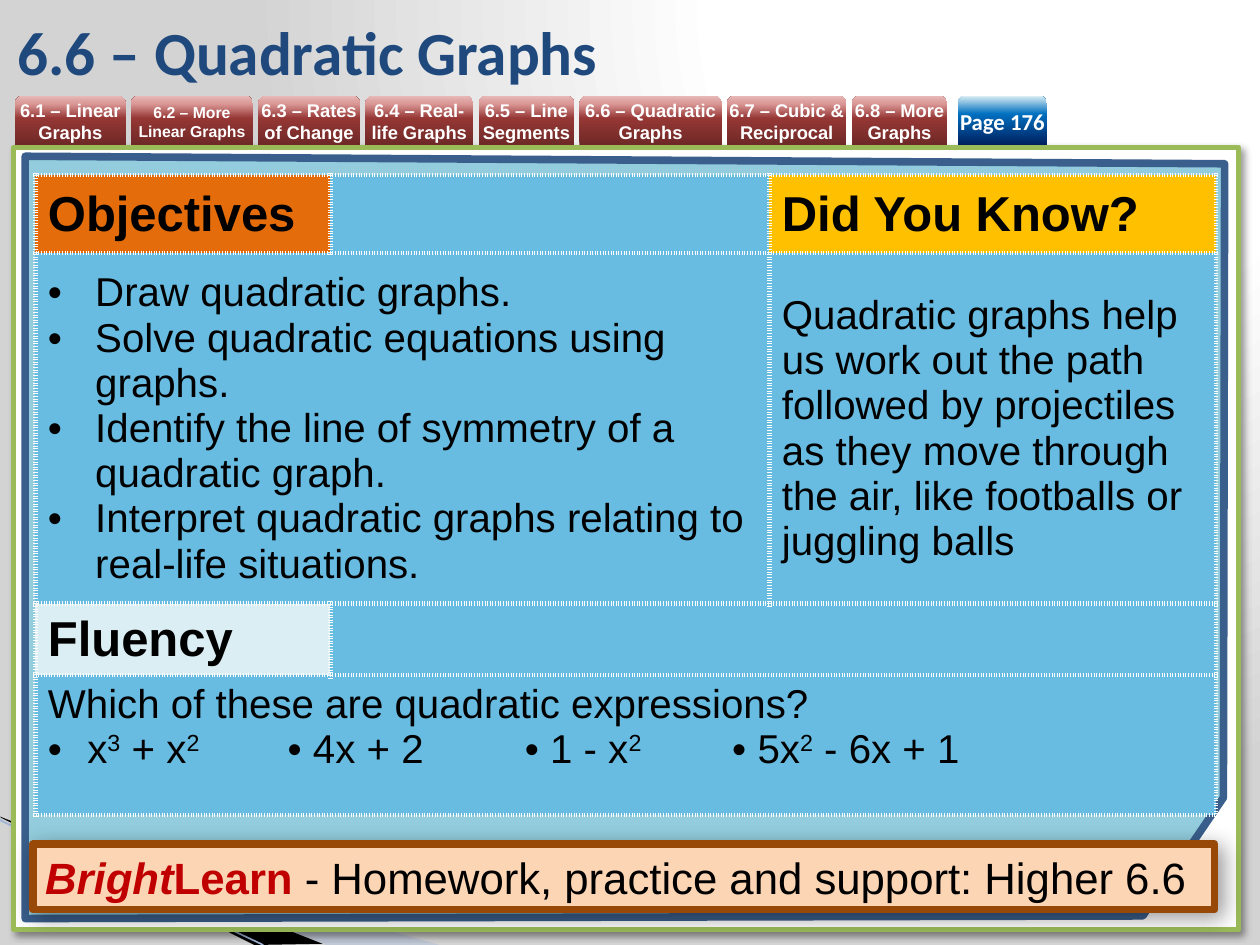
from dataclasses import dataclass
from typing import Optional

from lxml import etree
from pptx import Presentation
from pptx import util as u
from pptx.dml.color import RGBColor
from pptx.enum import shapes, text
from pptx.oxml import ns

Pt = u.Pt
SKY = "68BCE1"
TAB_TOP, TAB_HEIGHT, TAB_GAP = 54.7, 28.1, 2.9
RED_STOPS = ((0, "6F2927"), (54, "953735"), (83, "D99694"), (100, "E6B9B8"))
BLUE_STOPS = ((0, "002060"), (63, "0070C0"), (100, "DBEEF4"))
GREY_STOPS = ((0, "FFFFFF"), (40, "FFFFFF"), (100, "D3D3D3"))
UPWARD = {"lin": {"ang": "16200000", "scaled": "0"}}
HEAD = {"size": Pt(28), "bold": True}
BODY = {"size": Pt(23), "bold": False}


@dataclass
class Tab:
    label: str
    width: float
    size: float = 10.5


@dataclass
class Cell:
    row: int
    col: int
    lines: tuple
    style: dict
    fill: str = SKY
    indent: float = 0
    stops: tuple = ()
    first_bullet: int = 0
    anchor: text.MSO_ANCHOR = text.MSO_ANCHOR.MIDDLE


def colour(value: str) -> RGBColor:
    return RGBColor.from_string(value)


def add(parent, tag: str, **attrs):
    return etree.SubElement(parent, ns.qn("a:" + tag), attrs)


def add_run(p, words: str, style: dict, hex_colour: str = "000000", name: str = "Arial"):
    r = p.add_run()
    r.text = words
    for key, value in {"name": name, **style}.items():
        setattr(r.font, key, value)
    r.font.color.rgb = colour(hex_colour)
    return r


def set_gradient(holder, fill, stops: tuple, shade: dict):
    """Swap the solid fill of holder for a gradient."""
    fill.solid()
    solid = holder.find(ns.qn("a:solidFill"))
    grad = etree.Element(ns.qn("a:gradFill"), {"rotWithShape": "1"})
    stop_list = add(grad, "gsLst")
    for pos, value in stops:
        add(add(stop_list, "gs", pos=str(pos * 1000)), "srgbClr", val=value)
    for tag, attrs in shade.items():
        node = add(grad, tag, **attrs)
        if tag == "path":
            add(node, "fillToRect", l="65000", b="98000")
    holder.replace(solid, grad)


def style_shape(sp, fill: str, line: Optional[str] = None, width: float = 0):
    sp.shadow.inherit = False
    sp.fill.solid()
    sp.fill.fore_color.rgb = colour(fill)
    if line:
        sp.line.color.rgb = colour(line)
        sp.line.width = Pt(width)
    else:
        sp.line.fill.background()


def add_shadow(sp, blur: float):
    effects = sp._element.spPr.find(ns.qn("a:effectLst"))
    shadow = add(effects, "outerShdw", blurRad=str(Pt(blur)), dist=str(Pt(3)),
                 dir="2700000", algn="tl", rotWithShape="0")
    add(add(shadow, "srgbClr", val="000000"), "alpha", val="40000")


def add_box(s, kind, x: float, y: float, w: float, h: float):
    return s.shapes.add_shape(kind, Pt(x), Pt(y), Pt(w), Pt(h))


def add_outline(s, points: tuple, fill: str, line: Optional[str] = None, width: float = 0):
    pts = [(Pt(x), Pt(y)) for x, y in points]
    builder = s.shapes.build_freeform(*pts[0])
    builder.add_line_segments(pts[1:], close=True)
    sp = builder.convert_to_shape()
    style_shape(sp, fill, line, width)
    return sp


def add_tab(s, tab: Tab, x: float, stops: tuple, font: str = "Arial"):
    sp = add_box(s, shapes.MSO_SHAPE.ROUND_2_SAME_RECTANGLE, x, TAB_TOP, tab.width, TAB_HEIGHT)
    style_shape(sp, "FFFFFF")
    set_gradient(sp._element.spPr, sp.fill, stops, UPWARD)
    tf = sp.text_frame
    for side in ("left", "right", "top", "bottom"):
        setattr(tf, "margin_" + side, 0)
    tf.word_wrap = True
    tf.vertical_anchor = text.MSO_ANCHOR.MIDDLE
    p = tf.paragraphs[0]
    p.alignment = text.PP_ALIGN.CENTER
    add_run(p, tab.label, {"size": Pt(tab.size), "bold": True}, "FFFFFF", font)


def add_bullet(p, indent: float, stops: tuple):
    pPr = p._p.get_or_add_pPr()
    pPr.set("marL", str(Pt(indent)))
    pPr.set("indent", str(-Pt(indent)))
    add(pPr, "buFont", typeface="Arial")
    add(pPr, "buChar", char="•")
    if stops:
        tab_list = add(pPr, "tabLst")
        for pos in stops:
            add(tab_list, "tab", pos=str(Pt(pos)), algn="l")


def fill_cell(table, item: Cell):
    cell = table.cell(item.row, item.col)
    cell.fill.fore_color.rgb = colour(item.fill)
    cell.vertical_anchor = item.anchor
    tf = cell.text_frame
    for i, line in enumerate(item.lines):
        p = tf.add_paragraph() if i else tf.paragraphs[0]
        if item.indent and i >= item.first_bullet:
            add_bullet(p, item.indent, item.stops)
        # Every second part between bars is an exponent
        for k, words in enumerate(line.split("|")):
            r = add_run(p, words, item.style)
            if k % 2:
                r._r.get_or_add_rPr().set("baseline", "30000")


def add_grid(s, cells: tuple):
    frame = s.shapes.add_table(4, 3, Pt(20.2), Pt(100.1), Pt(674.6), Pt(365.8))
    table = frame.table
    for col, width in zip(table.columns, (168.5, 250.9, 255.2)):
        col.width = Pt(width)
    for row, height in zip(table.rows, (44.6, 148.3, 33.8, 79.9)):
        row.height = Pt(height)
    for cell in table.iter_cells():
        tcPr = cell._tc.get_or_add_tcPr()
        for tag in ("lnL", "lnR", "lnT", "lnB"):
            ln = add(tcPr, tag, w=str(Pt(3)))
            add(add(ln, "solidFill"), "srgbClr", val="FFFFFF")
            add(ln, "prstDash", val="sysDot")
        cell.fill.solid()
        cell.fill.fore_color.rgb = colour(SKY)
    for row, first, last in ((1, 0, 1), (2, 1, 2), (3, 0, 2)):
        table.cell(row, first).merge(table.cell(row, last))
    for item in cells:
        fill_cell(table, item)


TABS = (Tab("6.1 – Linear Graphs", 63.4), Tab("6.2 – More Linear Graphs", 69.8, 9),
        Tab("6.3 – Rates of Change", 58.3), Tab("6.4 – Real-life Graphs", 61.9),
        Tab("6.5 – Line Segments", 54.7), Tab("6.6 – Quadratic Graphs", 81.4),
        Tab("6.7 – Cubic & Reciprocal", 68.4), Tab("6.8 – More Graphs", 54.7))

CELLS = (
    Cell(0, 0, ("Objectives",), HEAD, "E46C0A"),
    Cell(0, 2, ("Did You Know?",), HEAD, "FFC000"),
    Cell(1, 0, ("Draw quadratic graphs.", "Solve quadratic equations using graphs.",
                "Identify the line of symmetry of a quadratic graph.",
                "Interpret quadratic graphs relating to real-life situations."), BODY, indent=27),
    Cell(1, 2, ("Quadratic graphs help us work out the path followed by projectiles as they "
                "move through the air, like footballs or juggling balls",), BODY),
    Cell(2, 0, ("Fluency",), HEAD, "DBEEF4"),
    Cell(3, 0, ("Which of these are quadratic expressions?",
                "x|3| + x|2|\t• 4x + 2\t• 1 - x|2|\t• 5x|2| - 6x + 1"), BODY, indent=22.5,
         stops=(137, 272.5, 391), first_bullet=1, anchor=text.MSO_ANCHOR.TOP),
)


def main():
    prs = Presentation()
    prs.slide_width, prs.slide_height = Pt(720), Pt(540)
    s = prs.slides.add_slide(prs.slide_layouts[6])

    # Background and corner stripes
    fill = s.background.fill
    fill.solid()
    set_gradient(s._element.find(".//" + ns.qn("p:bgPr")), fill, GREY_STOPS,
                 {"path": {"path": "circle"}})
    pale = add_outline(s, ((0, 468), (251.3, 540), (186.5, 540), (0, 467.3)), "A7B9DB")
    add(pale._element.spPr.find(".//" + ns.qn("a:srgbClr")), "alpha", val="40000")
    add_outline(s, ((0, 466.6), (184.3, 539.3), (145.4, 540), (0.7, 467.3)), "000000")
    edge = s.shapes.add_connector(shapes.MSO_CONNECTOR.STRAIGHT, 0, Pt(468.7), Pt(150.5), Pt(540))
    edge.line.color.rgb = colour("9EB3D6")
    edge.line.width = Pt(0.95)
    add(edge._element.spPr, "effectLst")

    # Panels
    panel = add_box(s, shapes.MSO_SHAPE.RECTANGLE, 7.9, 84.2, 699.8, 447.1)
    style_shape(panel, "FFFFFF", "9BBB59", 3)
    add_shadow(panel, 4)
    add_outline(s, ((14.4, 89.3), (699.8, 93.6), (699.1, 455.8), (653, 523.4), (14.4, 524.9)),
                "93CDDD", "3A5F8C", 4.33)

    # Section tabs
    x = 8.5
    for tab in TABS:
        add_tab(s, tab, x, RED_STOPS)
        x += tab.width + TAB_GAP
    add_tab(s, Tab("Page 176", 51.1, 13), 547.2, BLUE_STOPS, "Calibri")

    # Title
    tf = s.shapes.add_textbox(Pt(2.9), Pt(3.6), Pt(595.4), Pt(51.1)).text_frame
    tf.word_wrap = True
    tf.vertical_anchor = text.MSO_ANCHOR.MIDDLE
    add_run(tf.paragraphs[0], "6.6 – Quadratic Graphs", {"size": Pt(35), "bold": True},
            "1F497D", "Calibri")

    # Lesson table
    add_grid(s, CELLS)

    # Homework banner
    banner = add_box(s, shapes.MSO_SHAPE.RECTANGLE, 18.7, 482.4, 675.4, 37.4)
    style_shape(banner, "FCD5B5", "984807", 4.33)
    add_shadow(banner, 13)
    tf = banner.text_frame
    tf.word_wrap = True
    p = tf.paragraphs[0]
    p.alignment = text.PP_ALIGN.LEFT
    for words, bold, italic, value in (("Bright", True, True, "C00000"),
                                       ("Learn ", True, False, "C00000"),
                                       ("- Homework, practice and support: Higher 6.6",
                                        False, False, "000000")):
        add_run(p, words, {"size": Pt(25), "bold": bold, "italic": italic}, value)
    prs.save("out.pptx")


if __name__ == "__main__":
    main()
